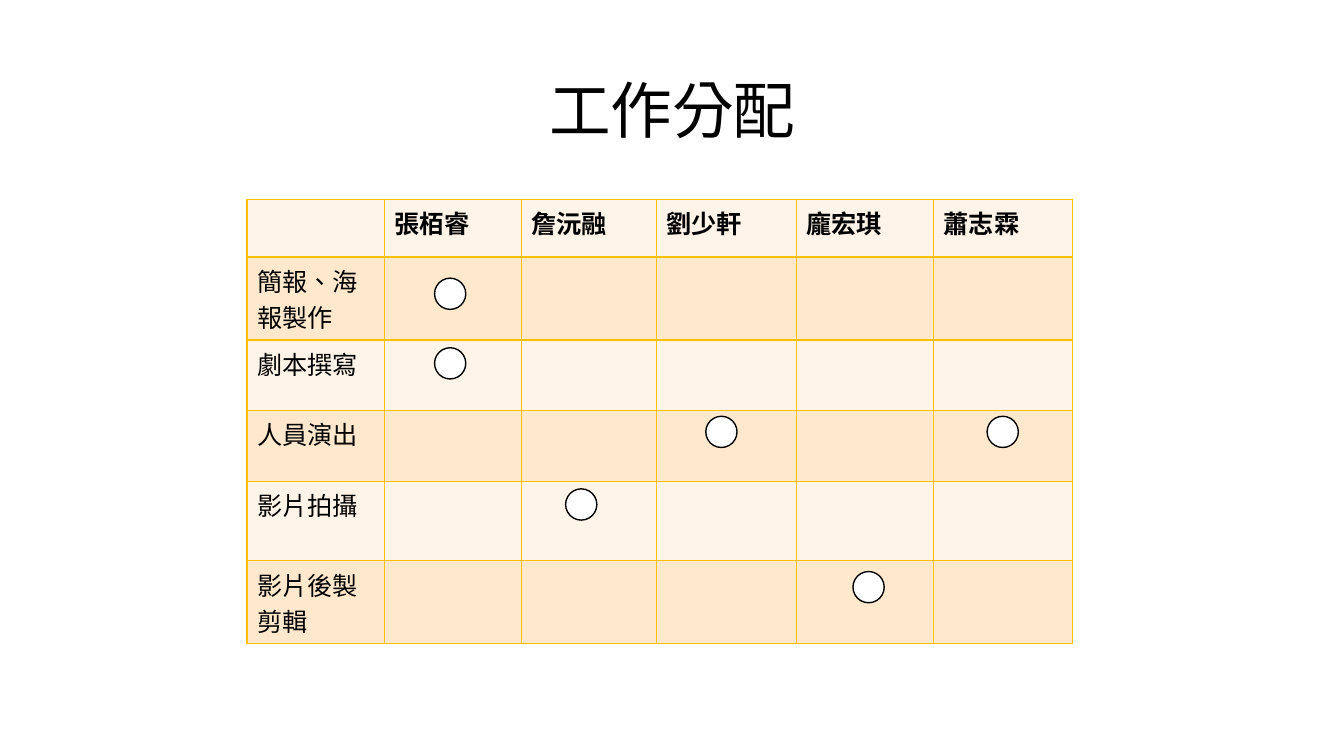
from dataclasses import dataclass

from lxml.etree import SubElement
from pptx import Presentation
from pptx.dml.color import RGBColor
from pptx.enum.shapes import MSO_SHAPE
from pptx.enum.text import MSO_ANCHOR, PP_ALIGN
from pptx.oxml.ns import qn
from pptx.util import Pt

PX = 9144


@dataclass(frozen=True)
class Theme:
    """Colours, fonts and type sizes of the slide."""

    ink: str = "000000"
    paper: str = "FFFFFF"
    grid: str = "FFC000"
    bands: tuple = ("FFF4E7", "FFE8CC")
    latin: str = "Calibri"
    chinese: str = "Noto Sans CJK SC"
    title_size: int = 44
    cell_size: int = 18
    line_width: int = 1


THEME = Theme()
PAGE = (1333, 750)
TITLE_BOX = (92, 40, 1150, 145)
TABLE_BOX = (245, 198, 820, 426)
MEMBERS = ["張栢睿", "詹沅融", "劉少軒", "龐宏琪", "蕭志霖"]
TASKS = ["簡報、海報製作", "劇本撰寫", "人員演出", "影片拍攝", "影片後製剪輯"]
COLUMN_WIDTHS = [136, 136, 134, 139, 136, 138]
ROW_HEIGHTS = [57, 70, 70, 70, 79, 79]
MARK_SIZE = 31
MARK_LEFTS = [186, 316, 455, 601, 734]
MARK_TOPS = [78, 147, 215, 287, 369]
ASSIGNMENTS = [(0, 0), (1, 0), (2, 2), (2, 4), (3, 1), (4, 3)]


def scaled(*lengths):
    """Turn px lengths into EMU."""
    return [length * PX for length in lengths]


def style_span(span, size, face, bold=False):
    """Format one run of Chinese text."""
    span.font.size = Pt(size)
    span.font.name = face
    span.font.bold = bold
    span.font.color.rgb = RGBColor.from_string(THEME.ink)
    properties = span.font._element
    properties.set("lang", "zh-TW")
    SubElement(properties, qn("a:ea"), typeface=THEME.chinese)


def add_title(page, box):
    """Place the heading in the title placeholder."""
    title = page.shapes.title
    title.left, title.top, title.width, title.height = scaled(*box)
    title.text_frame.text = "工作分配"
    title.text_frame.vertical_anchor = MSO_ANCHOR.MIDDLE
    para = title.text_frame.paragraphs[0]
    para.alignment = PP_ALIGN.CENTER
    para.line_spacing = 0.9
    style_span(para.runs[0], THEME.title_size, THEME.chinese)


def add_borders(cell):
    """Draw the grid line on all four sides of a cell."""
    properties = cell._tc.get_or_add_tcPr()
    for side in ("lnL", "lnR", "lnT", "lnB"):
        line = SubElement(properties, qn(f"a:{side}"), w=str(Pt(THEME.line_width)))
        fill = SubElement(line, qn("a:solidFill"))
        SubElement(fill, qn("a:srgbClr"), val=THEME.grid)


def add_work_table(page, box):
    """Build the banded table of tasks and members."""
    rows, columns = len(ROW_HEIGHTS), len(COLUMN_WIDTHS)
    table = page.shapes.add_table(rows, columns, *scaled(*box)).table
    for column, width in zip(table.columns, scaled(*COLUMN_WIDTHS)):
        column.width = width
    for row, height in zip(table.rows, scaled(*ROW_HEIGHTS)):
        row.height = height
    labels = [["", *MEMBERS]] + [[task] + [""] * len(MEMBERS) for task in TASKS]
    for row_index, row_labels in enumerate(labels):
        header = row_index == 0
        for column_index, label in enumerate(row_labels):
            cell = table.cell(row_index, column_index)
            cell.text_frame.text = label
            add_borders(cell)
            cell.fill.solid()
            cell.fill.fore_color.rgb = RGBColor.from_string(THEME.bands[row_index % 2])
            for span in cell.text_frame.paragraphs[0].runs:
                face = THEME.latin if header else THEME.chinese
                style_span(span, THEME.cell_size, face, header)


def add_marks(page, box):
    """Put a circle on each assigned task of the table."""
    left, top = box[:2]
    for task, member in ASSIGNMENTS:
        place = scaled(left + MARK_LEFTS[member], top + MARK_TOPS[task], MARK_SIZE, MARK_SIZE)
        mark = page.shapes.add_shape(MSO_SHAPE.OVAL, *place)
        mark.shadow.inherit = False
        mark.fill.solid()
        mark.fill.fore_color.rgb = RGBColor.from_string(THEME.paper)
        mark.line.color.rgb = RGBColor.from_string(THEME.ink)
        mark.line.width = Pt(THEME.line_width)


def main():
    """Create and save the deck."""
    deck = Presentation()
    deck.slide_width, deck.slide_height = scaled(*PAGE)
    page = deck.slides.add_slide(deck.slide_layouts[5])
    add_title(page, TITLE_BOX)
    add_work_table(page, TABLE_BOX)
    add_marks(page, TABLE_BOX)
    deck.save("out.pptx")


if __name__ == "__main__":
    main()
